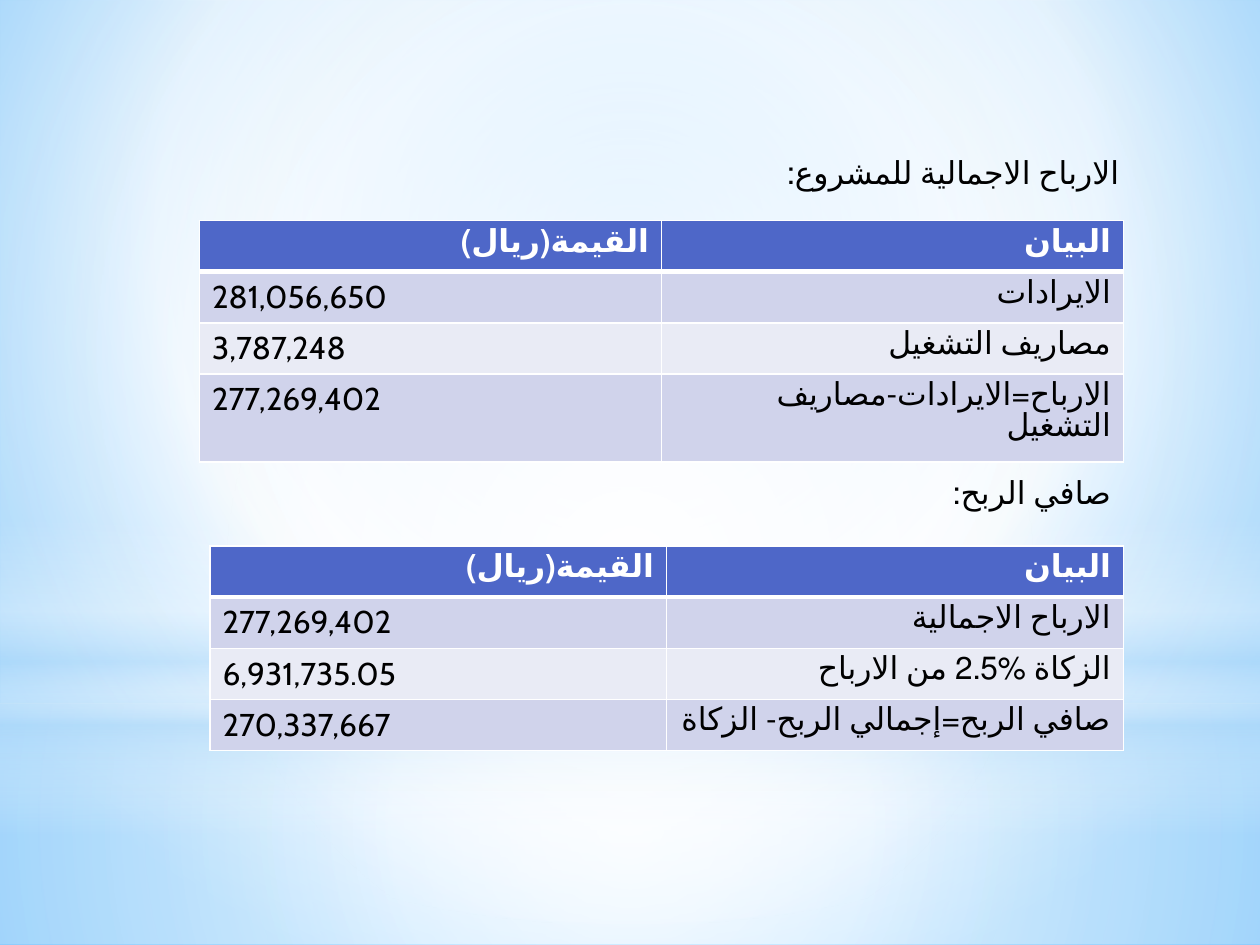
from dataclasses import dataclass

from lxml import etree
from pptx import Presentation
from pptx import util as u
from pptx.dml.color import RGBColor
from pptx.enum import lang, shapes, text
from pptx.oxml.ns import qn


@dataclass(frozen=True)
class Theme:
    font: str = "Cabin"
    size: float = 18
    ink: str = "000000"
    white: str = "FFFFFF"
    header: str = "4E67C8"
    bands: tuple = ("D0D3EB", "E9EBF5")
    sky: str = "B4DCFA"
    glow: str = "9ED5FF"
    deep_sky: str = "5BB9FF"
    rule: float = 1
    header_rule: float = 3


COLUMNS, ROWS = 120, 90  # grid of twelfths of an inch
RIGHT_EDGE = 107
CENTRE = (50, 50, 50, 50)


def write(frame, words, *, theme, color, bold=False, rtl=True):
    """Put one formatted paragraph in a text frame."""
    paragraph = frame.paragraphs[0]
    paragraph.alignment = text.PP_ALIGN.RIGHT if rtl else text.PP_ALIGN.LEFT
    run = paragraph.add_run()
    run.text = words
    run.font.name = theme.font
    run.font.size = u.Pt(theme.size)
    run.font.bold = bold
    run.font.color.rgb = RGBColor.from_string(color)
    if rtl:
        paragraph._p.get_or_add_pPr().set("rtl", "1")
        run.font.language_id = lang.MSO_LANGUAGE_ID.ARABIC


def sub(parent, tag, **attributes):
    return etree.SubElement(parent, qn(tag), attributes)


def set_gradient(fill, owner, stops, focus=None):
    """Stops are (position, colour, opacity); no focus means top to bottom."""
    fill.gradient()
    grad = owner.find(".//" + qn("a:gradFill"))
    for child in list(grad):
        grad.remove(child)
    stop_list = sub(grad, "a:gsLst")
    for position, color, opacity in stops:
        stop = sub(stop_list, "a:gs", pos=str(position * 1000))
        paint = sub(stop, "a:srgbClr", val=color)
        if opacity < 100:
            sub(paint, "a:alpha", val=str(opacity * 1000))
    if focus:
        circle = sub(grad, "a:path", path="circle")
        sub(circle, "a:fillToRect",
            **{side: str(share * 1000) for side, share in zip("ltrb", focus)})
    else:
        sub(grad, "a:lin", ang="5400000", scaled="0")


class Deck:
    def __init__(self, theme):
        self.theme = theme
        self.file = Presentation()
        self.file.slide_width, self.file.slide_height = u.Inches(10), u.Inches(7.5)
        self.slide = self.file.slides.add_slide(self.file.slide_layouts[6])

    def box(self, left, top, width, height):
        column = self.file.slide_width / COLUMNS
        row = self.file.slide_height / ROWS
        return [u.Emu(round(n)) for n in
                (left * column, top * row, width * column, height * row)]

    def background(self, stops, focus):
        set_gradient(self.slide.background.fill, self.slide.element, stops, focus)

    def light(self, kind, top, height, stops, focus=CENTRE):
        """A full-width veil of light over the background."""
        veil = self.slide.shapes.add_shape(kind, *self.box(0, top, COLUMNS, height))
        veil.shadow.inherit = False
        veil.line.fill.background()
        set_gradient(veil.fill, veil.element, stops, focus)

    def heading(self, words, left, top, width):
        label = self.slide.shapes.add_textbox(*self.box(left, top, width, 4.8))
        label.text_frame.word_wrap = True
        label.text_frame.auto_size = text.MSO_AUTO_SIZE.SHAPE_TO_FIT_TEXT
        write(label.text_frame, words, theme=self.theme, color=self.theme.ink)

    def borders(self, cell, bottom):
        properties = cell._tc.get_or_add_tcPr()
        widths = dict.fromkeys(("a:lnL", "a:lnR", "a:lnT"), self.theme.rule)
        widths["a:lnB"] = bottom
        for index, (tag, width) in enumerate(widths.items()):
            line = etree.Element(qn(tag), w=str(u.Pt(width)))
            sub(sub(line, "a:solidFill"), "a:srgbClr", val=self.theme.white)
            properties.insert(index, line)

    def statement(self, left, top, lines):
        """A two-column money table: amount on the left, item on the right."""
        theme = self.theme
        entries = [("القيمة(ريال)", "البيان"), *lines]
        place = self.box(left, top, RIGHT_EDGE - left, 19.5)
        table = self.slide.shapes.add_table(len(entries), 2, *place).table
        for row, entry in enumerate(entries):
            is_header = row == 0
            for column, words in enumerate(entry):
                cell = table.cell(row, column)
                cell.fill.solid()
                cell.fill.fore_color.rgb = RGBColor.from_string(
                    theme.header if is_header else theme.bands[(row - 1) % 2])
                self.borders(cell, theme.header_rule if is_header else theme.rule)
                write(cell.text_frame, words, theme=theme, bold=is_header,
                      color=theme.white if is_header else theme.ink,
                      rtl=is_header or column == 1)


def main():
    theme = Theme()
    white, sky = theme.white, theme.sky
    rectangle, oval = shapes.MSO_SHAPE.RECTANGLE, shapes.MSO_SHAPE.OVAL
    deck = Deck(theme)

    # Sky background with veils of light
    deck.background([(0, theme.glow, 100), (60, white, 100),
                     (100, theme.deep_sky, 100)], (20, 10, 20, 60))
    deck.light(rectangle, 67, 23, [(0, white, 91), (37, white, 76), (100, sky, 79)])
    deck.light(rectangle, 0, 67, [(0, white, 89), (48, white, 62), (100, sky, 79)])
    deck.light(rectangle, 49.5, 30,
               [(0, white, 0), (29, white, 30), (45, sky, 40),
                (55, white, 26), (65, sky, 60), (100, white, 0)], focus=None)
    deck.light(oval, 21, 67, [(0, white, 100), (56, white, 0)])

    # Gross profit
    deck.heading("الارباح الاجمالية للمشروع:", 71.8, 14, 36)
    deck.statement(19, 21, [
        ("281,056,650", "الايرادات"),
        ("3,787,248", "مصاريف التشغيل"),
        ("277,269,402", "الارباح=الايرادات-مصاريف التشغيل"),
    ])

    # Net profit
    deck.heading("صافي الربح:", 73, 44.5, 34)
    deck.statement(20, 52, [
        ("277,269,402", "الارباح الاجمالية"),
        ("6,931,735.05", "الزكاة %2.5 من الارباح"),
        ("270,337,667", "صافي الربح=إجمالي الربح- الزكاة"),
    ])

    deck.file.save("out.pptx")


if __name__ == "__main__":
    main()
